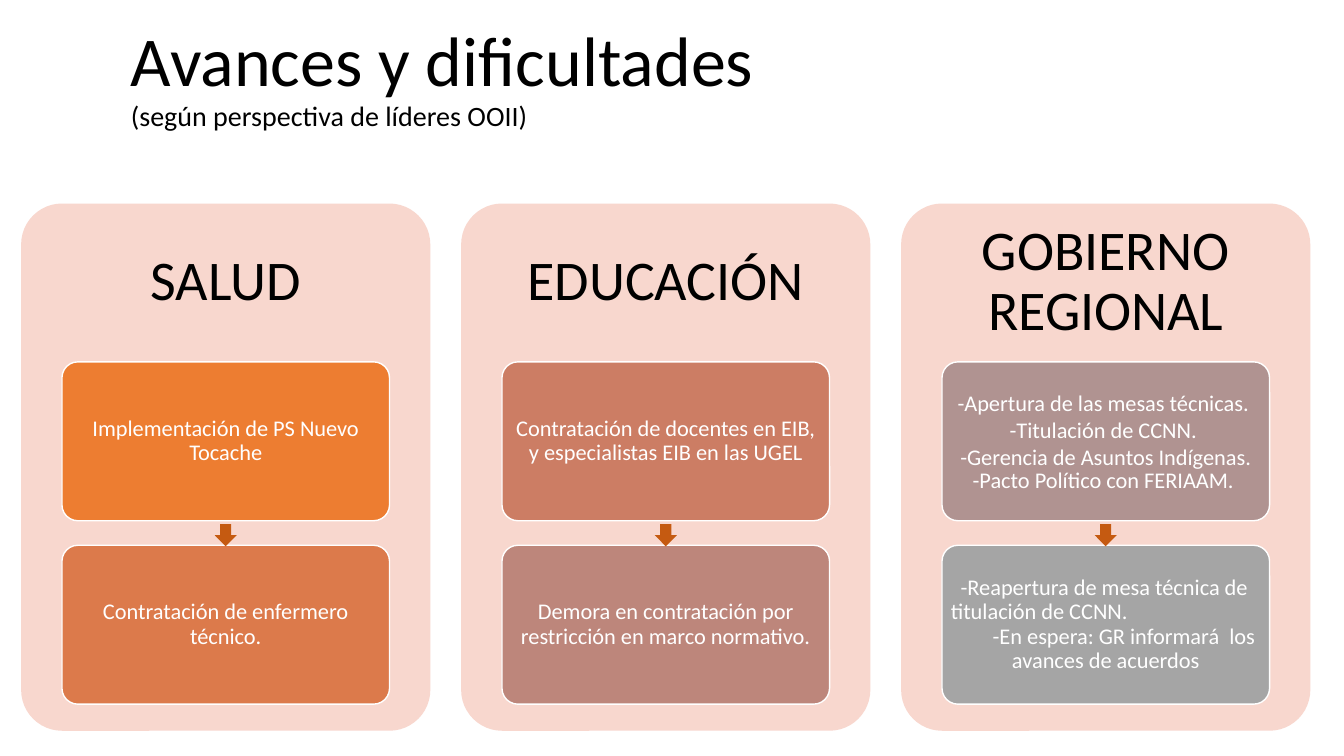
from pptx import Presentation
from pptx.dml.color import RGBColor
from pptx.enum import shapes, text
from pptx.util import Pt

TITLE = "Avances y dificultades"
SUBTITLE = "(según perspectiva de líderes OOII)"

# Each card: fill colour, then (text, line spacing, first-line indent, alignment) per paragraph
CENTER, LEFT = text.PP_ALIGN.CENTER, text.PP_ALIGN.LEFT
COLUMNS = [
    ("SALUD", [
        ("ED7D31", [("Implementación de PS Nuevo Tocache", 0.9, 0, CENTER)]),
        ("DC7A4B", [("Contratación de enfermero técnico.", 0.9, 0, CENTER)]),
    ]),
    ("EDUCACIÓN", [
        ("CC7D64", [("Contratación de docentes en EIB, y especialistas EIB en las UGEL", 0.9, 0, CENTER)]),
        ("BD867B", [("Demora en contratación por restricción en marco normativo.", 0.9, 0, CENTER)]),
    ]),
    ("GOBIERNO REGIONAL", [
        ("B09391", [
            ("-Apertura de las mesas técnicas. ", 1, 0, CENTER),
            ("-Titulación de CCNN. ", 1, 0, CENTER),
            ("-Gerencia de Asuntos Indígenas.", 1, 0, CENTER),
            ("-Pacto Político con FERIAAM. ", 0.9, 0, CENTER),
        ]),
        ("A5A5A5", [
            ("-Reapertura de mesa técnica de titulación de CCNN.", 0.9, 7, LEFT),
            ("-En espera: GR informará  los avances de acuerdos", 0.9, 26, CENTER),
        ]),
    ]),
]

THEME = {
    "font": "Calibri", "dark": "000000", "light": "FFFFFF",
    "panel": "F8D7CE", "arrow": "C55A11",
    "title": 50, "subtitle": 20, "heading": 40, "body": 16,
}

PANEL_LEFT, PANEL_TOP, PANEL_WIDTH, PANEL_HEIGHT = 15.1, 145.4, 292.3, 376.6
PANEL_PITCH = 314.3
HEADING_HEIGHT = 113
CARD_WIDTH, CARD_HEIGHT, CARD_TOP, CARD_PITCH = 234, 113.5, 258.5, 131
ARROW_SIZE, ARROW_TOP = 15.8, 374.4


def write(shape, paragraphs, size, color, insets):
    """Fill a shape with (text, line spacing, first-line indent, alignment) paragraphs."""
    frame = shape.text_frame
    frame.word_wrap = True
    frame.vertical_anchor = text.MSO_ANCHOR.MIDDLE
    frame.margin_left = frame.margin_right = Pt(insets[0])
    frame.margin_top = frame.margin_bottom = Pt(insets[1])
    frame.text = "\n".join(entry[0] for entry in paragraphs)
    for paragraph, (_, spacing, indent, alignment) in zip(frame.paragraphs, paragraphs):
        paragraph.alignment = alignment
        paragraph.line_spacing = spacing
        if indent:
            paragraph._p.get_or_add_pPr().set("indent", str(Pt(indent)))
        for run in paragraph.runs:
            run.font.name = THEME["font"]
            run.font.size = Pt(size)
            run.font.color.rgb = RGBColor.from_string(color)


def add_box(slide, kind, bounds, fill, line=None):
    shape = slide.shapes.add_shape(kind, *map(Pt, bounds))
    shape.shadow.inherit = False
    shape.fill.solid()
    shape.fill.fore_color.rgb = RGBColor.from_string(fill)
    if line:
        shape.line.color.rgb = RGBColor.from_string(line)
        shape.line.width = Pt(1)
    else:
        shape.line.fill.background()
    return shape


def add_rounded(slide, bounds, fill, line=None):
    shape = add_box(slide, shapes.MSO_SHAPE.ROUNDED_RECTANGLE, bounds, fill, line)
    shape.adjustments[0] = 0.1
    return shape


def add_text(slide, bounds, paragraphs, size, insets):
    box = slide.shapes.add_textbox(*map(Pt, bounds))
    write(box, paragraphs, size, THEME["dark"], insets)
    return box


def add_column(slide, left, heading, cards):
    add_rounded(slide, (left, PANEL_TOP, PANEL_WIDTH, PANEL_HEIGHT), THEME["panel"])
    add_text(slide, (left, PANEL_TOP, PANEL_WIDTH, HEADING_HEIGHT),
             [(heading, 0.9, 0, CENTER)], THEME["heading"], (12, 12))
    card_left = left + (PANEL_WIDTH - CARD_WIDTH) / 2
    for row, (fill, paragraphs) in enumerate(cards):
        bounds = (card_left, CARD_TOP + row * CARD_PITCH, CARD_WIDTH, CARD_HEIGHT)
        card = add_rounded(slide, bounds, fill, THEME["light"])
        write(card, paragraphs, THEME["body"], THEME["light"], (3, 2))
    arrow_left = left + (PANEL_WIDTH - ARROW_SIZE) / 2
    add_box(slide, shapes.MSO_SHAPE.DOWN_ARROW,
            (arrow_left, ARROW_TOP, ARROW_SIZE, ARROW_SIZE), THEME["arrow"])


def main():
    presentation = Presentation()
    presentation.slide_width, presentation.slide_height = Pt(960), Pt(540)
    slide = presentation.slides.add_slide(presentation.slide_layouts[6])

    title = add_text(slide, (86.4, -0.7, 792, 114.5),
                     [(TITLE, 0.9, 0, LEFT), (SUBTITLE, 0.9, 0, LEFT)],
                     THEME["title"], (7.2, 3.6))
    title.text_frame.paragraphs[1].runs[0].font.size = Pt(THEME["subtitle"])

    for index, (heading, cards) in enumerate(COLUMNS):
        add_column(slide, PANEL_LEFT + index * PANEL_PITCH, heading, cards)

    presentation.save("out.pptx")


if __name__ == "__main__":
    main()
